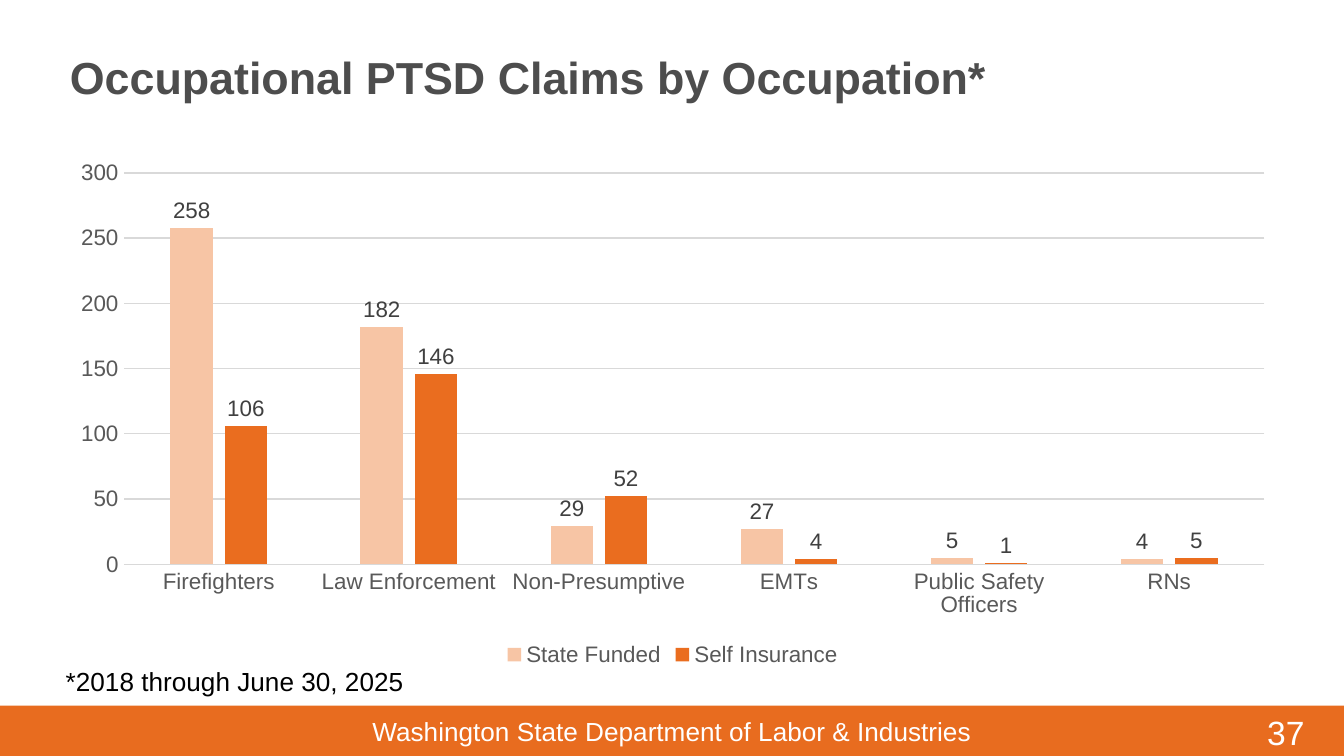
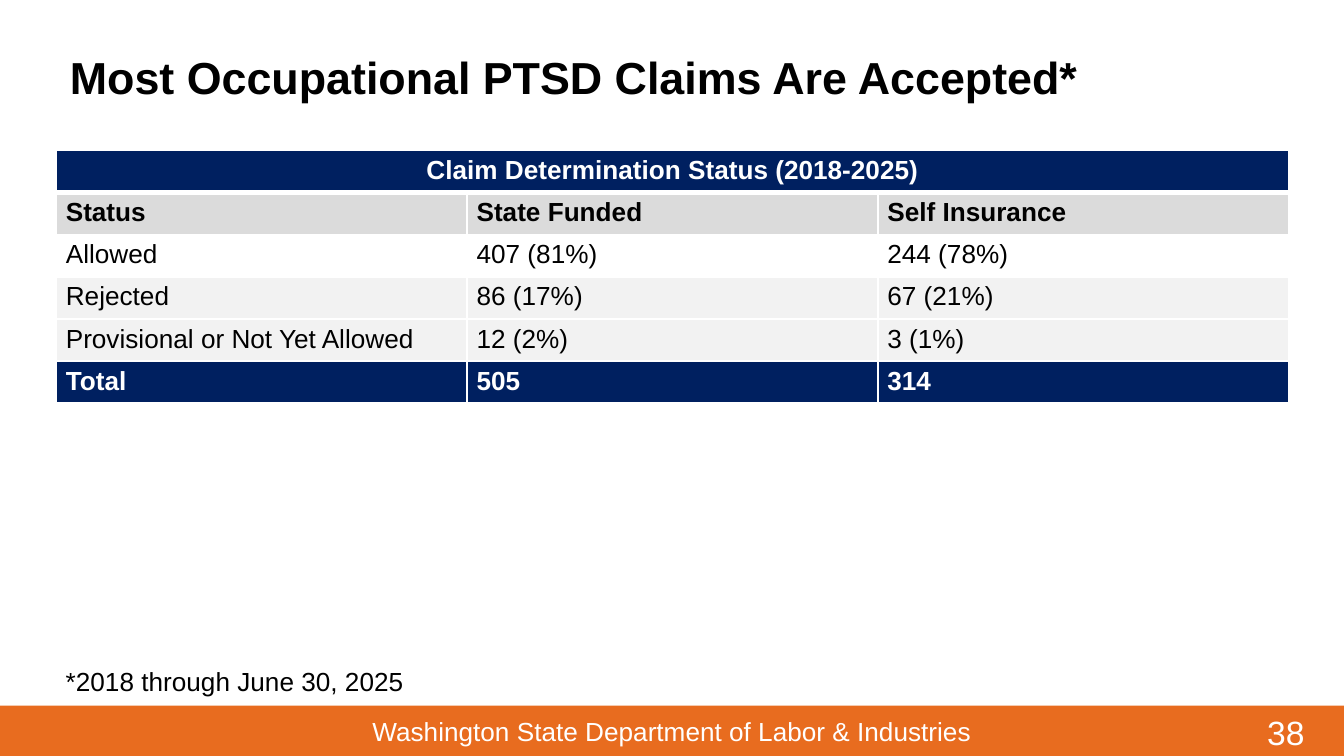
from lxml import etree
from pptx import Presentation
from pptx import util as u
from pptx.chart.data import CategoryChartData
from pptx.dml.color import RGBColor
from pptx.enum import chart as ch, shapes, text
from pptx.oxml.ns import qn

FONT = "Arial"
ORANGE, NAVY, WHITE, BLACK = "E86C1F", "002060", "FFFFFF", "000000"
AXIS_TEXT, LABEL_TEXT, GRID = "595959", "404040", "D9D9D9"
FOOTER = "Washington State Department of Labor & Industries"
NOTE = "*2018 through June 30, 2025"
SLIDE_W = 10
SLIDE_H = SLIDE_W * 9 / 16
BAND_TOP = 5.25
BODY = (0.42, 1.12, 9.17)
CHART_H, ROW_H = 3.88, 0.31

CLAIMS = {
    "Firefighters": (258, 106),
    "Law Enforcement": (182, 146),
    "Non-Presumptive": (29, 52),
    "EMTs": (27, 4),
    "Public Safety Officers": (5, 1),
    "RNs": (4, 5),
}
SERIES = [("State Funded", "F7C5A5"), ("Self Insurance", "EA6D1F")]

STATUS = [
    (("Claim Determination Status (2018-2025)", "", ""), NAVY, WHITE, True),
    (("Status", "State Funded", "Self Insurance"), "DBDBDB", BLACK, True),
    (("Allowed", "407 (81%)", "244 (78%)"), WHITE, BLACK, False),
    (("Rejected", "86 (17%)", "67 (21%)"), "F2F2F2", BLACK, False),
    (("Provisional or Not Yet Allowed", "12 (2%)", "3 (1%)"), "F2F2F2", BLACK, False),
    (("Total", "505", "314"), NAVY, WHITE, True),
]


def rgb(color):
    return RGBColor.from_string(color)


def box(*lengths):
    return [u.Inches(n) for n in lengths]


def style(font, size, color, bold=False):
    font.name, font.size, font.bold = FONT, u.Pt(size), bold
    font.color.rgb = rgb(color)


def add_text(s, at, words, size, color, align=text.PP_ALIGN.LEFT, wrap=True):
    tf = s.shapes.add_textbox(*box(*at)).text_frame
    tf.word_wrap = wrap
    tf.auto_size = text.MSO_AUTO_SIZE.SHAPE_TO_FIT_TEXT
    p = tf.paragraphs[0]
    p.text, p.alignment = words, align
    style(p.font, size, color)


def add_slide(prs, number, title, title_color):
    s = prs.slides.add_slide(prs.slide_layouts[5])
    band = s.shapes.add_shape(
        shapes.MSO_SHAPE.RECTANGLE, *box(0, BAND_TOP, SLIDE_W, SLIDE_H - BAND_TOP))
    band.shadow.inherit = False
    band.fill.solid()
    band.fill.fore_color.rgb = rgb(ORANGE)
    band.line.fill.background()
    add_text(s, (9.33, BAND_TOP, 0.58, 0.44), str(number), 18, WHITE)
    add_text(s, (0, 5.27, SLIDE_W, 0.25), FOOTER, 14, WHITE, text.PP_ALIGN.CENTER)

    sp = s.shapes.title
    sp.left, sp.top, sp.width, sp.height = box(0.42, 0.31, 9.17, 0.52)
    tf = sp.text_frame
    tf.text = title
    tf.vertical_anchor = text.MSO_ANCHOR.MIDDLE
    tf.auto_size = text.MSO_AUTO_SIZE.NONE
    p = tf.paragraphs[0]
    p.alignment = text.PP_ALIGN.LEFT
    style(p.font, 24, title_color, True)
    return s


def add_note(s):
    add_text(s, (0.39, 4.9, 2.72, 0.34), NOTE, 14, BLACK, wrap=False)


def add_claims_chart(s):
    data = CategoryChartData()
    data.categories = list(CLAIMS)
    for (name, _), values in zip(SERIES, zip(*CLAIMS.values())):
        data.add_series(name, values)
    chart = s.shapes.add_chart(
        ch.XL_CHART_TYPE.COLUMN_CLUSTERED, *box(*BODY, CHART_H), data).chart
    style(chart.font, 10, BLACK)
    chart.has_title = False
    chart.has_legend = True
    chart.legend.position = ch.XL_LEGEND_POSITION.BOTTOM
    chart.legend.include_in_layout = False
    style(chart.legend.font, 12, AXIS_TEXT)

    cats, vals = chart.category_axis, chart.value_axis
    for axis in (cats, vals):
        axis.major_tick_mark = axis.minor_tick_mark = ch.XL_TICK_MARK.NONE
        style(axis.tick_labels.font, 12, AXIS_TEXT)
    vals.minimum_scale, vals.maximum_scale, vals.major_unit = 0, 300, 50
    vals.format.line.fill.background()
    for line in (cats.format.line, vals.major_gridlines.format.line):
        line.color.rgb = rgb(GRID)
        line.width = u.Pt(0.75)

    plot = chart.plots[0]
    plot.gap_width, plot.overlap, plot.vary_by_categories = 219, -27, False
    for series, (_, color) in zip(plot.series, SERIES):
        series.format.fill.solid()
        series.format.fill.fore_color.rgb = rgb(color)
        labels = series.data_labels
        labels.show_value = True
        labels.position = ch.XL_LABEL_POSITION.OUTSIDE_END
        style(labels.font, 12, LABEL_TEXT)


def add_borders(cell, **widths):
    tc_pr = cell._tc.get_or_add_tcPr()
    for side in "LRTB":
        ln = etree.SubElement(tc_pr, qn(f"a:ln{side}"), w=str(u.Pt(widths.get(side, 1))))
        fill = etree.SubElement(ln, qn("a:solidFill"))
        etree.SubElement(fill, qn("a:srgbClr"), val=WHITE)


def add_status_table(s):
    table = s.shapes.add_table(
        len(STATUS), 3, *box(*BODY, ROW_H * len(STATUS))).table
    for r, (words, fill, color, bold) in enumerate(STATUS):
        table.rows[r].height = u.Inches(ROW_H)
        for c, word in enumerate(words):
            cell = table.cell(r, c)
            add_borders(cell, **{0: {"B": 3}, 1: {"T": 3}}.get(r, {}))
            cell.fill.solid()
            cell.fill.fore_color.rgb = rgb(fill)
            cell.margin_left = cell.margin_right = u.Inches(0.07)
            cell.margin_top = cell.margin_bottom = u.Inches(0.04)
            p = cell.text_frame.paragraphs[0]
            p.text = word
            style(p.font, 14, color, bold)
    heading = table.cell(0, 0)
    heading.merge(table.cell(0, 2))
    heading.text_frame.paragraphs[0].alignment = text.PP_ALIGN.CENTER


def main():
    prs = Presentation()
    prs.slide_width, prs.slide_height = box(SLIDE_W, SLIDE_H)

    s = add_slide(prs, 37, "Occupational PTSD Claims by Occupation*", "4D4D4D")
    add_claims_chart(s)
    add_note(s)

    s = add_slide(prs, 38, "Most Occupational PTSD Claims Are Accepted*", BLACK)
    add_status_table(s)
    add_note(s)

    prs.save("out.pptx")


if __name__ == "__main__":
    main()
